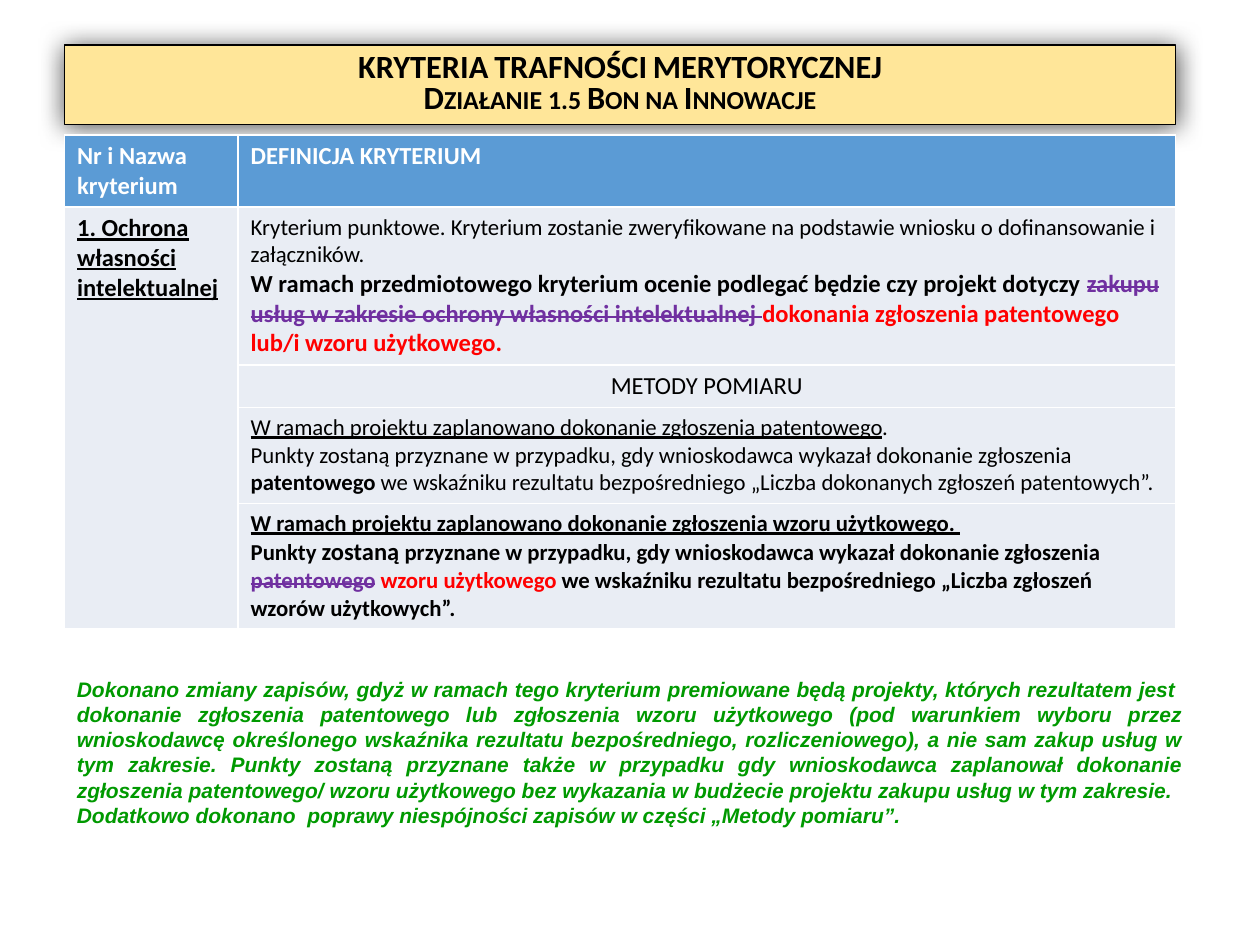
import lxml.etree
import pptx
import pptx.dml.color
import pptx.enum.text
import pptx.oxml
import pptx.oxml.ns
import pptx.util

Cm = pptx.util.Cm
Pt = pptx.util.Pt
ALIGN = pptx.enum.text.PP_ALIGN

COLORS = {
    "black": "000000",
    "white": "FFFFFF",
    "banner": "FFE699",
    "header": "5B9BD5",
    "cell": "E9EDF4",
    "removed": "7030A0",
    "added": "FF0000",
    "comment": "009900",
}

TITLE = ["KRYTERIA TRAFNOŚCI MERYTORYCZNEJ", "Działanie 1.5 Bon na Innowacje"]

PLAIN = {}
BOLD = {"bold": True}
UNDERLINED = {"underline": True}
REMOVED = {"color": "removed", "strike": True}
ADDED = {"color": "added"}

HEADINGS = ["Nr i Nazwa kryterium", "DEFINICJA KRYTERIUM"]
CRITERION = "1. Ochrona własności intelektualnej"
DEFINITIONS = [
    [
        (13, False, [("Kryterium punktowe. Kryterium zostanie zweryfikowane na podstawie "
                      "wniosku o dofinansowanie i załączników.", PLAIN)]),
        (14, True, [
            ("W ramach przedmiotowego kryterium ocenie podlegać będzie czy projekt dotyczy ", PLAIN),
            ("zakupu usług w zakresie ochrony własności intelektualnej ", REMOVED),
            ("dokonania zgłoszenia patentowego lub/i wzoru użytkowego.", ADDED),
        ]),
    ],
    [(14, False, [("METODY POMIARU", PLAIN)])],
    [
        (13, False, [
            ("W ramach projektu zaplanowano dokonanie zgłoszenia patentowego", UNDERLINED),
            (".", PLAIN),
        ]),
        (13, False, [
            ("Punkty zostaną przyznane w przypadku, gdy wnioskodawca wykazał dokonanie zgłoszenia ", PLAIN),
            ("patentowego", BOLD),
            (" we wskaźniku rezultatu bezpośredniego „Liczba dokonanych zgłoszeń patentowych”.", PLAIN),
        ]),
    ],
    [
        (13, True, [("W ramach projektu zaplanowano dokonanie zgłoszenia wzoru użytkowego. ", UNDERLINED)]),
        (13, True, [
            ("Punkty ", PLAIN),
            ("zostaną", {"size": 14}),
            (" przyznane w przypadku, gdy wnioskodawca wykazał dokonanie zgłoszenia ", PLAIN),
            ("patentowego", REMOVED),
            (" ", PLAIN),
            ("wzoru użytkowego ", ADDED),
            ("we wskaźniku rezultatu bezpośredniego „Liczba zgłoszeń wzorów użytkowych”.", PLAIN),
        ]),
    ],
]

COMMENTS = [
    "Dokonano zmiany zapisów, gdyż w ramach tego kryterium premiowane będą projekty, "
    "których rezultatem jest  dokonanie zgłoszenia patentowego lub zgłoszenia wzoru "
    "użytkowego (pod warunkiem wyboru przez wnioskodawcę określonego wskaźnika rezultatu "
    "bezpośredniego, rozliczeniowego), a nie sam zakup usług w tym zakresie. Punkty zostaną "
    "przyznane także w przypadku gdy wnioskodawca zaplanował dokonanie zgłoszenia "
    "patentowego/ wzoru użytkowego bez wykazania w budżecie projektu zakupu usług w tym zakresie.",
    "Dodatkowo dokonano  poprawy niespójności zapisów w części „Metody pomiaru”.",
]


def rgb(name):
    return pptx.dml.color.RGBColor.from_string(COLORS[name])


def set_font(font, size, color="black", bold=False, name="Calibri"):
    font.name = name
    font.size = Pt(size)
    font.bold = bold
    font.color.rgb = rgb(color)


def add_run(paragraph, text, size=None, color=None, bold=None, underline=None, strike=False):
    run = paragraph.add_run()
    run.text = text
    if size:
        run.font.size = Pt(size)
    if color:
        run.font.color.rgb = rgb(color)
    run.font.bold = bold
    run.font.underline = underline
    if strike:
        run._r.get_or_add_rPr().set("strike", "sngStrike")
    return run


def next_paragraph(text_frame, index):
    return text_frame.add_paragraph() if index else text_frame.paragraphs[0]


def add_glow_shadow(shape, blur, opacity):
    properties = shape._element.spPr
    effects = lxml.etree.SubElement(properties, pptx.oxml.ns.qn("a:effectLst"))
    shadow = lxml.etree.SubElement(
        effects, pptx.oxml.ns.qn("a:outerShdw"), blurRad=str(blur), algn="tl", rotWithShape="0")
    color = lxml.etree.SubElement(shadow, pptx.oxml.ns.qn("a:srgbClr"), val=COLORS["black"])
    lxml.etree.SubElement(color, pptx.oxml.ns.qn("a:alpha"), val=str(opacity * 1000))


def build_banner(slide, left, top, width, height):
    title = slide.shapes.title
    title.left, title.top, title.width, title.height = left, top, width, height
    title.fill.solid()
    title.fill.fore_color.rgb = rgb("banner")
    title.line.color.rgb = rgb("black")
    title.line.width = Pt(0.75)
    add_glow_shadow(title, Cm(0.53), 70)
    text_frame = title.text_frame
    text_frame.auto_size = pptx.enum.text.MSO_AUTO_SIZE.NONE
    text_frame.vertical_anchor = pptx.enum.text.MSO_ANCHOR.MIDDLE
    for index, text in enumerate(TITLE):
        paragraph = next_paragraph(text_frame, index)
        paragraph.alignment = ALIGN.CENTER
        paragraph.line_spacing = 0.8
        set_font(paragraph.font, 18.5, bold=True)
        run = add_run(paragraph, text)
        run._r.get_or_add_rPr().set("cap", "small")


def fill_cell(cell, color, paragraphs, text_color="black"):
    cell.fill.solid()
    cell.fill.fore_color.rgb = rgb(color)
    for index, (size, bold, runs) in enumerate(paragraphs):
        paragraph = next_paragraph(cell.text_frame, index)
        set_font(paragraph.font, size, text_color, bold)
        for text, style in runs:
            add_run(paragraph, text, **{"bold": bold, "color": text_color, **style})


def build_criteria_table(slide, left, top, width, height):
    row_heights = [1.45, 3.18, 0.85, 1.93, 2.52]
    table = slide.shapes.add_table(len(row_heights), 2, left, top, width, height).table
    table.horz_banding = False
    table.columns[0].width = Cm(3.5)
    table.columns[1].width = width - Cm(3.5)
    for row, row_height in zip(table.rows, row_heights):
        row.height = Cm(row_height)
    for column, heading in enumerate(HEADINGS):
        fill_cell(table.cell(0, column), "header", [(14, True, [(heading, PLAIN)])], "white")
    table.cell(1, 0).merge(table.cell(len(row_heights) - 1, 0))
    fill_cell(table.cell(1, 0), "cell", [(14, True, [(CRITERION, UNDERLINED)])])
    for row, paragraphs in enumerate(DEFINITIONS, start=1):
        fill_cell(table.cell(row, 1), "cell", paragraphs)
    table.cell(2, 1).text_frame.paragraphs[0].alignment = ALIGN.CENTER


def build_comment(slide, left, top, width, height):
    text_frame = slide.shapes.add_textbox(left, top, width, height).text_frame
    text_frame.word_wrap = True
    for index, text in enumerate(COMMENTS):
        paragraph = next_paragraph(text_frame, index)
        paragraph.alignment = ALIGN.JUSTIFY
        set_font(paragraph.font, 12, "comment", True, "Arial")
        paragraph.font.italic = True
        add_run(paragraph, text)


def main():
    presentation = pptx.Presentation()
    presentation.slide_width = Cm(25.4)
    presentation.slide_height = Cm(19.05)
    slide = presentation.slides.add_slide(presentation.slide_layouts[5])
    left = Cm(1.3)
    build_banner(slide, left, Cm(0.91), Cm(22.4), Cm(1.6))
    build_criteria_table(slide, left, Cm(2.72), Cm(22.4), Cm(9.93))
    build_comment(slide, left, Cm(13.51), Cm(22.81), Cm(3.33))
    presentation.save("out.pptx")


if __name__ == "__main__":
    main()
